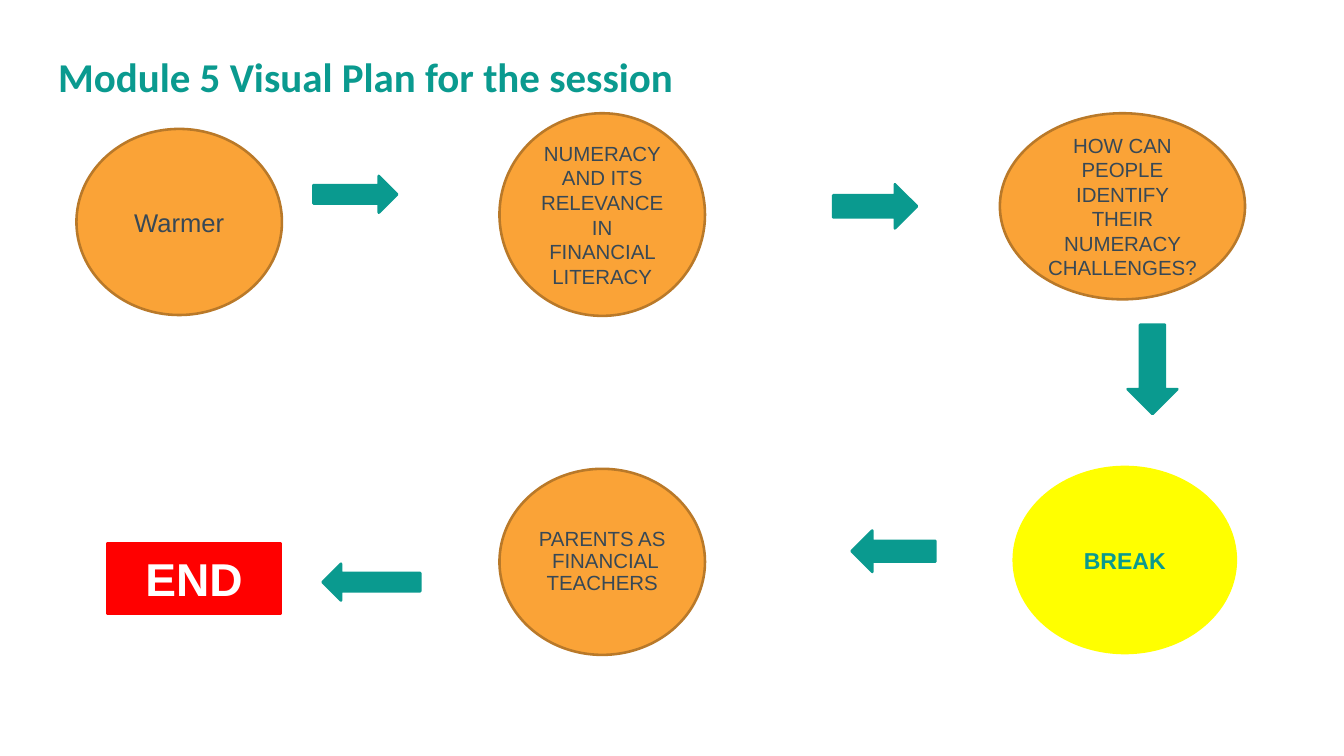
from pptx import Presentation
from pptx.dml.color import RGBColor
from pptx.enum.shapes import MSO_SHAPE
from pptx.enum.text import MSO_ANCHOR, PP_ALIGN
from pptx.util import Inches, Pt

CIRCLE = MSO_SHAPE.FLOWCHART_CONNECTOR
ARROW = MSO_SHAPE.RIGHT_ARROW
RECTANGLE = MSO_SHAPE.RECTANGLE
MIDDLE = MSO_ANCHOR.MIDDLE
LEFT, CENTER = PP_ALIGN.LEFT, PP_ALIGN.CENTER

TEAL, ORANGE, BROWN = "0A9A8F", "FAA337", "B97929"
SLATE, YELLOW, RED, WHITE = "374856", "FFFF00", "FF0000", "FFFFFF"

TOPICS = [
    ("Warmer", (0.83, 1.4, 2.23, 2.02), 20, 1),
    ("NUMERACY AND ITS RELEVANCE IN FINANCIAL LITERACY", (5.42, 1.23, 2.23, 2.2), 16, 1),
    ("HOW CAN PEOPLE IDENTIFY THEIR NUMERACY CHALLENGES?", (10.85, 1.23, 2.66, 2.02), 16, 1),
    ("PARENTS AS  FINANCIAL TEACHERS", (5.42, 5.09, 2.23, 2.02), 16, 0.9),
]
ARROWS = [
    ((3.4, 1.91, 0.91, 0.4), 0),
    ((9.04, 2, 0.91, 0.48), 0),
    ((12.02, 3.74, 0.97, 0.54), 90),
    ((9.24, 5.76, 0.91, 0.45), 180),
    ((3.5, 6.12, 1.06, 0.4), 180),
]


def color(value):
    return RGBColor.from_string(value)


def set_values(target, values):
    for name, value in values.items():
        setattr(target, name, value)


def write_text(shape, text, size, text_color, bold=False, font="Arial",
               alignment=CENTER, spacing=1):
    frame = shape.text_frame
    set_values(frame, {"word_wrap": True, "vertical_anchor": MIDDLE})
    paragraph = frame.paragraphs[0]
    set_values(paragraph, {"alignment": alignment, "line_spacing": spacing})
    run = paragraph.add_run()
    run.text = text
    set_values(run.font, {"name": font, "size": Pt(size), "bold": bold})
    run.font.color.rgb = color(text_color)


def add_figure(slide, kind, box, fill, line, rotation=0):
    shape = slide.shapes.add_shape(kind, *map(Inches, box))
    shape.shadow.inherit = False
    shape.rotation = rotation
    shape.fill.solid()
    shape.fill.fore_color.rgb = color(fill)
    shape.line.color.rgb = color(line)
    shape.line.width = Pt(2)
    return shape


def add_title(slide, text):
    title = slide.shapes.add_textbox(*map(Inches, (0.55, 0.47, 13.48, 0.79)))
    set_values(title.text_frame, {"margin_left": Inches(0.08), "margin_right": Inches(0.08)})
    write_text(title, text, 32, TEAL, True, "Calibri", LEFT, 0.9)


def main():
    presentation = Presentation()
    presentation.slide_width = Inches(1400 / 96)
    presentation.slide_height = Inches(788 / 96)
    slide = presentation.slides.add_slide(presentation.slide_layouts[6])
    add_title(slide, "Module 5 Visual Plan for the session")
    for text, box, size, spacing in TOPICS:
        topic = add_figure(slide, CIRCLE, box, ORANGE, BROWN)
        write_text(topic, text, size, SLATE, spacing=spacing)
    for box, rotation in ARROWS:
        add_figure(slide, ARROW, box, TEAL, TEAL, rotation)
    pause = add_figure(slide, CIRCLE, (11, 5.07, 2.41, 2.02), YELLOW, YELLOW)
    write_text(pause, "BREAK", 18, TEAL, True)
    end = add_figure(slide, RECTANGLE, (1.16, 5.9, 1.89, 0.76), RED, RED)
    write_text(end, "END", 36, WHITE, True)
    presentation.save("out.pptx")


if __name__ == "__main__":
    main()
